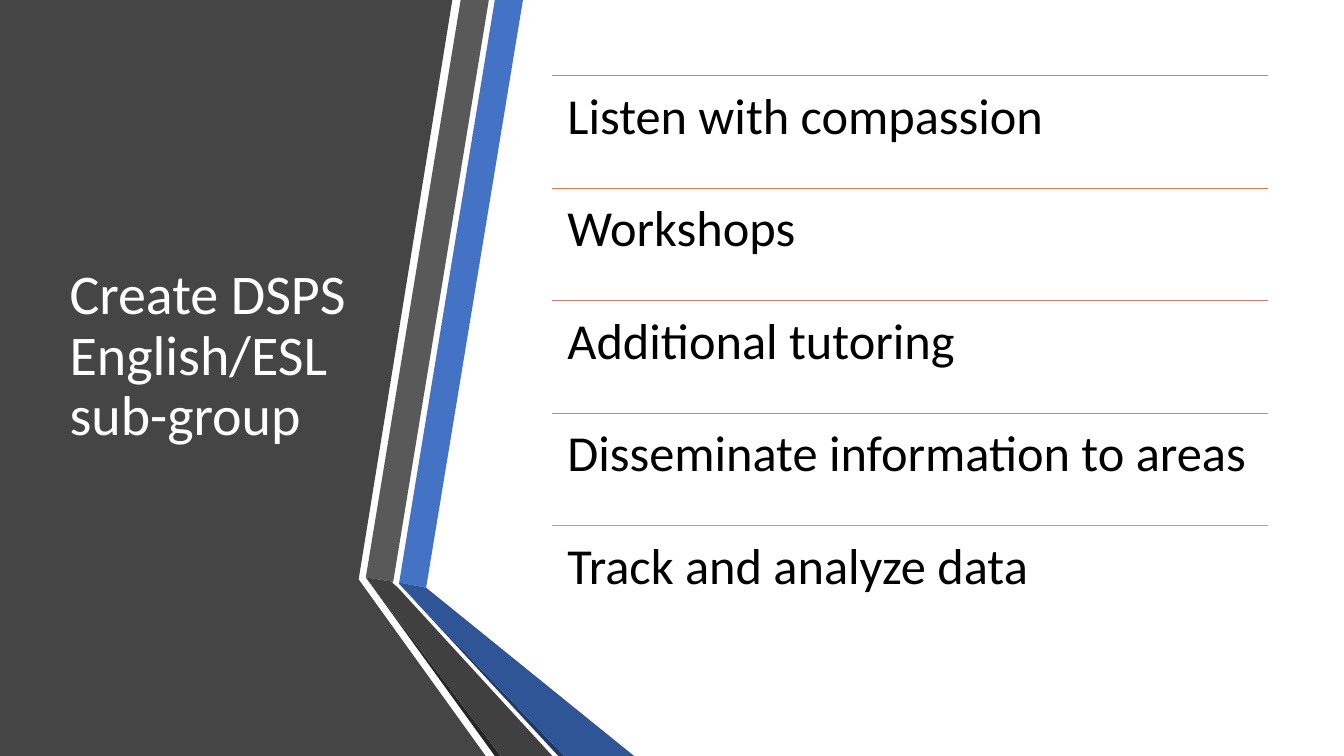
from lxml.etree import SubElement
from pptx import Presentation
from pptx.dml.color import RGBColor
from pptx.enum.shapes import MSO_CONNECTOR as CONN
from pptx.enum.text import MSO_ANCHOR as ANCHOR, MSO_AUTO_SIZE as AUTO, PP_ALIGN as ALIGN
from pptx.oxml.ns import qn
from pptx.util import Cm, Pt

PANEL = [(0, 0), (11.4, 0), (9.04, 14.6), (12.24, 19.05), (0, 19.05)]
BANDS = [
    ("4472C4", [(10.06, 14.68), (10.74, 14.81), (13.18, 0), (12.47, 0)]),
    ("595959", [(12.32, 0), (11.61, 0), (9.22, 14.55), (9.91, 14.66)]),
    ("262626", [(9.22, 14.55), (12.47, 19.05), (12.62, 19.05)]),
    ("203864", [(10.06, 14.71), (14.07, 19.05), (14.22, 19.05)]),
    ("2F5597", [(10.06, 14.71), (14.22, 19.05), (15.98, 19.05),
                (10.74, 14.81), (10.06, 14.68)]),
    ("404040", [(13.92, 19.05), (10.03, 14.81), (9.88, 14.68), (9.91, 14.66),
                (9.22, 14.55), (12.62, 19.05)]),
]
ACTIONS = [
    ("Listen with compassion", "ED7D31"),
    ("Workshops", "D87A51"),
    ("Additional tutoring", "C48170"),
    ("Disseminate information to areas", "B4908B"),
    ("Track and analyze data", "A5A5A5"),
]


def rgb(value):
    return RGBColor.from_string(value)


def put_text(sp, text, size=36, color="000000", anchor=ANCHOR.TOP, inset=None):
    tf = sp.text_frame
    tf.word_wrap = True
    tf.auto_size = AUTO.NONE
    tf.vertical_anchor = anchor
    if inset is not None:
        tf.margin_left = tf.margin_right = tf.margin_top = tf.margin_bottom = Cm(inset)
    p = tf.paragraphs[0]
    p.alignment = ALIGN.LEFT
    p.line_spacing = 0.9
    r = p.add_run()
    r.text = text
    r.font.name = "Calibri"
    r.font.size = Pt(size)
    r.font.color.rgb = rgb(color)


def add_polygon(shapes, x, y, points, color):
    first, *rest = [(Cm(x + px), Cm(y + py)) for px, py in points]
    builder = shapes.build_freeform(*first, scale=1.0)
    builder.add_line_segments(rest, close=True)
    sp = builder.convert_to_shape()
    sp.shadow.inherit = False
    sp.fill.solid()
    sp.fill.fore_color.rgb = rgb(color)
    sp.line.fill.background()


def add_rule(shapes, x, y, w, color):
    line = shapes.add_connector(CONN.STRAIGHT, Cm(x), Cm(y), Cm(x + w), Cm(y))
    line.line.color.rgb = rgb(color)
    line.line.width = Pt(1)
    SubElement(line._element.spPr, qn("a:effectLst"))


def draw_side_panel(s, x, y):
    add_polygon(s.shapes, x, y, PANEL, "454545")
    bands = s.shapes.add_group_shape().shapes
    for color, points in BANDS:
        add_polygon(bands, x, y, points, color)


def draw_title(s, x, y, w, h):
    sp = s.shapes.title
    sp.left, sp.top, sp.width, sp.height = Cm(x), Cm(y), Cm(w), Cm(h)
    put_text(sp, "Create DSPS English/ESL sub-group", size=40, color="FFFFFF",
             anchor=ANCHOR.MIDDLE)
    sp.element.getparent().append(sp.element)


def draw_actions(s, x, y, w, h):
    rows = s.shapes.add_group_shape().shapes
    row_h = h / len(ACTIONS)
    for i, (text, color) in enumerate(ACTIONS):
        top = y + i * row_h
        add_rule(rows, x, top, w, color)
        sp = rows.add_textbox(Cm(x), Cm(top), Cm(w), Cm(row_h))
        put_text(sp, text, inset=0.38)


def main():
    prs = Presentation()
    prs.slide_width, prs.slide_height = Cm(33.87), Cm(19.05)
    s = prs.slides.add_slide(prs.slide_layouts[5])
    draw_side_panel(s, 0, 0)
    draw_title(s, 1.5, 1.91, 7.72, 14.17)
    draw_actions(s, 13.92, 1.91, 18.03, 14.17)
    prs.save("out.pptx")


if __name__ == "__main__":
    main()
